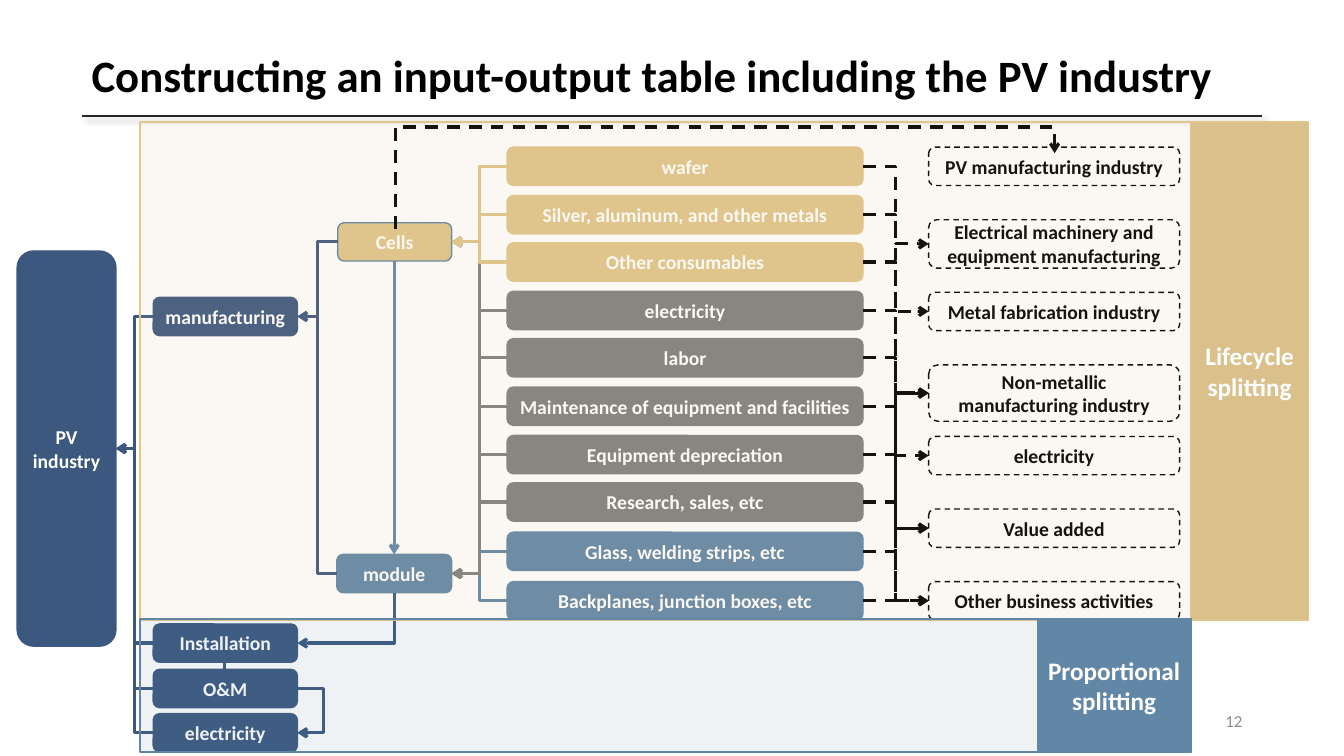
from lxml.etree import SubElement
from pptx import Presentation
from pptx.dml.color import RGBColor
from pptx.enum.dml import MSO_LINE
from pptx.enum.shapes import MSO_CONNECTOR, MSO_SHAPE
from pptx.enum.text import MSO_ANCHOR, PP_ALIGN
from pptx.oxml.ns import qn
from pptx.util import Pt

PX = 9144  # 100 px to the inch
THEME = dict(
    font="Calibri", navy="3C587F", blue="6286A6", gold="E0C68B", sand="DAC18C",
    gray="808080", black="000000", white="FFFFFF", rule="262626", faint="8C8C8C",
    title=32, band=18, box=14, number=12, thin=1, flow=2.25,
)

TITLE = "Constructing an input-output table including the PV industry"
PAGE = "12"
# name: (text, left, top, width, height, fill, outline)
STAGES = {
    "pv": ("PV\nindustry", 17, 249, 98, 392, "navy", "navy"),
    "manufacturing": ("manufacturing", 152, 295, 143, 38, "navy", "navy"),
    "installation": ("Installation", 152, 619, 143, 38, "navy", "navy"),
    "om": ("O&M", 152, 664, 143, 38, "navy", "navy"),
    "electricity": ("electricity", 152, 708, 143, 38, "navy", "navy"),
    "module": ("module", 334, 550, 114, 38, "blue", "blue"),
    "cells": ("Cells", 335, 221, 113, 38, "gold", "blue"),
}
STAGE_FLOWS = [
    ("manufacturing", "pv"), ("installation", "pv"), ("om", "pv"),
    ("electricity", "pv"), ("module", "manufacturing"), ("cells", "manufacturing"),
]
# colour, first top, last top, items as (text, index of the receiving sector)
INPUTS = [
    ("gold", 146, 241, [("wafer", 1), ("Silver, aluminum, and other metals", 2),
                        ("Other consumables", 3)]),
    ("gray", 289, 479, [("electricity", 4), ("labor", 5),
                        ("Maintenance of equipment and facilities", 6),
                        ("Equipment depreciation", 5), ("Research, sales, etc", 6)]),
    ("blue", 528, 577, [("Glass, welding strips, etc", 3),
                        ("Backplanes, junction boxes, etc", 3)]),
]
INPUT_FLOWS = [("gray", "cells"), ("gold", "cells"), ("blue", "module"), ("gray", "module")]
SECTORS = [
    ("PV manufacturing industry", 38),
    ("Electrical machinery and equipment manufacturing", 48),
    ("Metal fabrication industry", 38),
    ("Non-metallic manufacturing industry", 56),
    ("electricity", 38), ("Value added", 38), ("Other business activities", 38),
]
INPUT_X, INPUT_W, SECTOR_X, SECTOR_W, ROW_H = 503, 353, 921, 249, 38
SECTOR_TOPS = (146, 577)
# text, left, top, width, height, fill, outline, opacity in percent
BANDS = [
    ("", 139, 121, 1053, 494, "sand", "gold", 10),
    ("Lifecycle splitting", 1181, 121, 117, 494, "sand", "gold", 100),
    ("", 139, 614, 1043, 132, "blue", "blue", 10),
    ("Proportional splitting", 1029, 614, 152, 132, "blue", "blue", 100),
]

prs = Presentation()
prs.slide_width, prs.slide_height = 1333 * PX, 750 * PX
s = prs.slides.add_slide(prs.slide_layouts[6])


def color(name):
    return RGBColor.from_string(THEME[name])


def spread(first, last, count):
    return [round(first + i * (last - first) / (count - 1)) for i in range(count)]


def write(sp, text, size="box", ink="white", bold=True, align=PP_ALIGN.CENTER,
          inset=10, spacing=1.0):
    tf = sp.text_frame
    tf.word_wrap = True
    tf.vertical_anchor = MSO_ANCHOR.MIDDLE
    tf.margin_left = tf.margin_right = inset * PX
    for i, line in enumerate(text.split("\n")):
        p = tf.add_paragraph() if i else tf.paragraphs[0]
        p.alignment, p.line_spacing = align, spacing
        r = p.add_run()
        r.text = line
        r.font.name, r.font.size, r.font.bold = THEME["font"], Pt(THEME[size]), bold
        r.font.color.rgb = color(ink)


def textbox(text, x, y, w, h, **style):
    write(s.shapes.add_textbox(x * PX, y * PX, w * PX, h * PX), text, **style)


def box(x, y, w, h, fill, outline, kind=MSO_SHAPE.ROUNDED_RECTANGLE, opacity=100):
    sp = s.shapes.add_shape(kind, x * PX, y * PX, w * PX, h * PX)
    sp.shadow.inherit = False
    sp.line.color.rgb, sp.line.width = color(outline), Pt(THEME["thin"])
    if not fill:
        sp.fill.background()
        sp.line.dash_style = MSO_LINE.DASH
        return sp
    sp.fill.solid()
    sp.fill.fore_color.rgb = color(fill)
    if opacity < 100:
        rgb = sp.fill._xPr.find(".//" + qn("a:srgbClr"))
        SubElement(rgb, qn("a:alpha"), val=str(opacity * 1000))
    return sp


def arrow(sp, ink, dash=False):
    sp.line.color.rgb, sp.line.width = color(ink), Pt(THEME["flow"])
    if dash:
        sp.line.dash_style = MSO_LINE.DASH
    SubElement(sp.line._get_or_add_ln(), qn("a:tailEnd"), type="arrow")


def connect(start, end, kind=MSO_CONNECTOR.ELBOW):
    """Add a connector and return it with its empty effect list."""
    c = s.shapes.add_connector(kind, *(v * PX for v in (*start, *end)))
    c.line.width = Pt(THEME["thin"])
    return c, SubElement(c._element.spPr, qn("a:effectLst"))


def flow(start, end, ink, dash=False, kind=MSO_CONNECTOR.ELBOW):
    arrow(connect(start, end, kind)[0], ink, dash)


def route(points, ink, dash=False):
    """Draw an arrow through the given corners."""
    fb = s.shapes.build_freeform(*points[0], scale=PX)
    fb.add_line_segments(points[1:], close=False)
    sp = fb.convert_to_shape()
    sp.fill.background()
    sp.shadow.inherit = False
    arrow(sp, ink, dash)


def left_of(name):
    _, x, y, _, h, *_ = STAGES[name]
    return x, y + h // 2


def right_of(name):
    x, y = left_of(name)
    return x + STAGES[name][3], y


# Heading
textbox(TITLE, 81, 40, 1150, 75, size="title", ink="black", align=PP_ALIGN.LEFT,
        spacing=0.9)
textbox(PAGE, 942, 695, 300, 40, size="number", ink="faint", bold=False,
        align=PP_ALIGN.RIGHT)
rule, effects = connect((81, 115), (1252, 115), MSO_CONNECTOR.STRAIGHT)
rule.line.color.rgb = color("rule")
shadow = SubElement(effects, qn("a:outerShdw"), blurRad=str(Pt(4)), dist=str(Pt(3)),
                    dir="2700000", rotWithShape="0")
SubElement(SubElement(shadow, qn("a:srgbClr"), val=THEME["gray"]), qn("a:alpha"), val="40000")

# Stages of the industry
om_right, electricity_right = right_of("om"), right_of("electricity")
om_turn = [(321, om_right[1]), (321, electricity_right[1]), electricity_right]
route([(223, 657), (223, om_right[1]), *om_turn], "navy")
for text, x, y, w, h, fill, outline in STAGES.values():
    write(box(x, y, w, h, fill, outline), text, inset=5)
for source, target in STAGE_FLOWS:
    flow(left_of(source), right_of(target), "navy")
flow((391, 259), (391, 550), "blue", kind=MSO_CONNECTOR.STRAIGHT)
route([(391, 588), (391, 638), right_of("installation")], "navy")
route([om_right, *om_turn], "navy")

# Inputs and receiving sectors
sector_middles = []
for (text, h), y in zip(SECTORS, spread(*SECTOR_TOPS, len(SECTORS))):
    write(box(SECTOR_X, y, SECTOR_W, h, None, "black"), text, ink="black")
    sector_middles.append(y + h // 2)
input_middles = {}
for ink, first, last, items in INPUTS:
    tops = spread(first, last, len(items))
    input_middles[ink] = [y + ROW_H // 2 for y in tops]
    for (text, sector), y in zip(items, tops):
        write(box(INPUT_X, y, INPUT_W, ROW_H, ink, ink), text, inset=5)
        flow((INPUT_X + INPUT_W, y + ROW_H // 2), (SECTOR_X, sector_middles[sector]),
             "black", dash=True)
for ink, target in INPUT_FLOWS:
    for y in input_middles[ink]:
        flow((INPUT_X, y), right_of(target), ink)
route([(392, 227), (392, 126), (1046, 126), (1046, 152)], "black", dash=True)

# Splitting methods
for text, x, y, w, h, fill, outline, opacity in BANDS:
    sp = box(x, y, w, h, fill, outline, MSO_SHAPE.RECTANGLE, opacity)
    if text:
        write(sp, text, size="band", inset=5)

prs.save("out.pptx")
